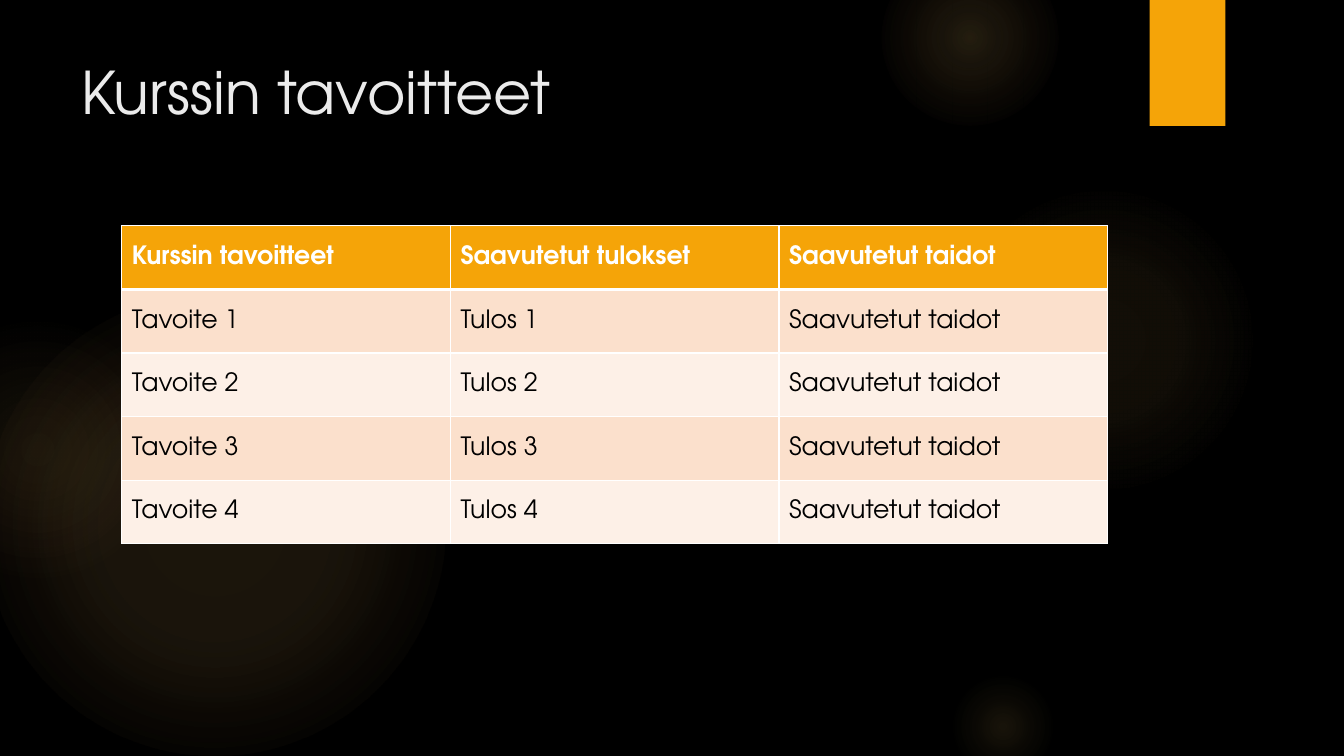
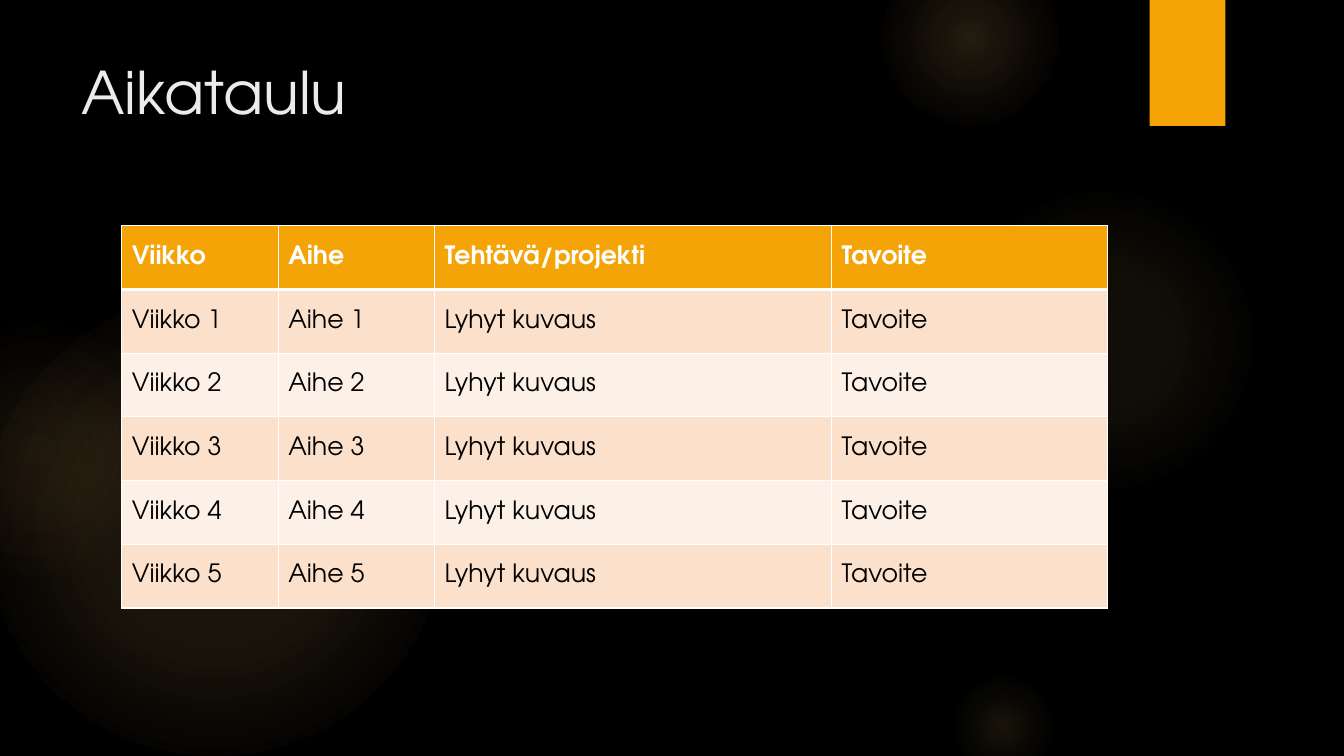
from dataclasses import dataclass

from lxml.etree import SubElement
from pptx import Presentation
from pptx.dml.color import RGBColor
from pptx.enum.shapes import MSO_SHAPE
from pptx.enum.text import MSO_ANCHOR
from pptx.oxml.ns import qn
from pptx.util import Pt

EMU_PER_PX = 9525


@dataclass(frozen=True)
class Theme:
    font: str = "TeX Gyre Adventor"
    background: str = "000000"
    accent: str = "F5A408"
    glow: str = "FAC96A"
    warm_glow: str = "F59B74"
    title: str = "EBEBEB"
    header_text: str = "FFFFFF"
    body_text: str = "000000"
    border: str = "FFFFFF"
    bands: tuple = ("FBE0CC", "FDF0E7")
    title_size: int = 42
    table_size: int = 18
    thin: int = 1
    thick: int = 3


THEME = Theme()
TITLE_BOX = (68, 48, 988, 147)
TAB_BOX = (1095, 0, 72, 120)
TABLE_LEFT, TABLE_TOP = 116, 215

# Left, top, diameter, then (position %, colour, opacity %) from centre to rim
GLOWS = [
    (-16, 280, 440, [(0, THEME.glow, 11), (36, THEME.glow, 10), (75, THEME.glow, 0)]),
    (-88, 304, 248, [(0, THEME.glow, 8), (36, THEME.glow, 5), (71, THEME.warm_glow, 0)]),
    (903, 176, 296, [(0, THEME.glow, 7), (36, THEME.glow, 6), (69, THEME.glow, 0)]),
    (840, -48, 168, [(0, THEME.glow, 14), (36, THEME.glow, 7), (73, THEME.glow, 0)]),
    (903, 640, 104, [(0, THEME.glow, 10), (31, THEME.glow, 5), (66, THEME.glow, 0)]),
]


def px(length):
    return int(length * EMU_PER_PX)


def rgb(colour):
    return RGBColor.from_string(colour)


def add_xml(parent, tag, **attributes):
    return SubElement(parent, qn(tag), {key: str(value) for key, value in attributes.items()})


def add_colour(parent, colour, opacity):
    element = add_xml(parent, "a:srgbClr", val=colour)
    add_xml(element, "a:alpha", val=opacity * 1000)


# Shared backdrop

def add_plain_shape(slide, kind, box):
    shape = slide.shapes.add_shape(kind, *map(px, box))
    shape.shadow.inherit = False
    shape.line.fill.background()
    return shape


def add_glow(slide, left, top, diameter, stops):
    shape = add_plain_shape(slide, MSO_SHAPE.OVAL, (left, top, diameter, diameter))
    shape.fill.gradient()
    gradient = shape.element.spPr.find(qn("a:gradFill"))
    for child in list(gradient):
        gradient.remove(child)
    stop_list = add_xml(gradient, "a:gsLst")
    for position, colour, opacity in stops:
        add_colour(add_xml(stop_list, "a:gs", pos=position * 1000), colour, opacity)
    circle = add_xml(gradient, "a:path", path="circle")
    add_xml(circle, "a:fillToRect", l=50000, t=50000, r=50000, b=50000)
    return shape


def add_accent_tab(slide):
    shape = add_plain_shape(slide, MSO_SHAPE.RECTANGLE, TAB_BOX)
    shape.fill.solid()
    shape.fill.fore_color.rgb = rgb(THEME.accent)
    effects = shape.element.spPr.find(qn("a:effectLst"))
    shadow = add_xml(effects, "a:outerShdw", blurRad=Pt(3), dist=Pt(2),
                     dir=5400000, rotWithShape=0)
    add_colour(shadow, "000000", 45)
    return shape


def add_backdrop(slide):
    """Draw the decoration and move it behind the placeholders of the layout."""
    shapes = [add_glow(slide, *glow) for glow in GLOWS] + [add_accent_tab(slide)]
    layout_tree = slide.slide_layout.shapes.element
    for index, shape in enumerate(shapes, start=2):
        layout_tree.insert(index, shape.element)


# Shared title style

def style_master(master):
    fill = master.background.fill
    fill.solid()
    fill.fore_color.rgb = rgb(THEME.background)
    level = master.element.find(".//" + qn("p:titleStyle") + "/" + qn("a:lvl1pPr"))
    level.set("algn", "l")
    run_style = level.find(qn("a:defRPr"))
    run_style.set("sz", str(THEME.title_size * 100))
    run_style.find(qn("a:latin")).set("typeface", THEME.font)
    colour = run_style.find(qn("a:solidFill"))
    colour.remove(colour[0])
    add_xml(colour, "a:srgbClr", val=THEME.title)


def style_layout(layout):
    for placeholder in list(layout.placeholders):
        if placeholder.placeholder_format.idx:
            placeholder.element.getparent().remove(placeholder.element)
        else:
            placeholder.left, placeholder.top, placeholder.width, placeholder.height = map(px, TITLE_BOX)
            placeholder.text_frame.vertical_anchor = MSO_ANCHOR.TOP


# Slides and tables

def add_titled_slide(presentation, layout, title):
    slide = presentation.slides.add_slide(layout)
    slide.shapes.title.text_frame.paragraphs[0].add_run().text = title
    return slide


def set_borders(cell, top, bottom):
    properties = cell._tc.get_or_add_tcPr()
    widths = {"a:lnL": THEME.thin, "a:lnR": THEME.thin, "a:lnT": top, "a:lnB": bottom}
    for tag, width in widths.items():
        line = add_xml(properties, tag, w=Pt(width))
        add_xml(add_xml(line, "a:solidFill"), "a:srgbClr", val=THEME.border)


def fill_cell(cell, text, row):
    is_header = row == 0
    set_borders(cell, top=THEME.thick if row == 1 else THEME.thin,
                bottom=THEME.thick if is_header else THEME.thin)
    cell.fill.solid()
    cell.fill.fore_color.rgb = rgb(THEME.accent if is_header else THEME.bands[(row - 1) % 2])
    cell.vertical_anchor = MSO_ANCHOR.MIDDLE
    run = cell.text_frame.paragraphs[0].add_run()
    run.text = text
    run.font.name = THEME.font
    run.font.size = Pt(THEME.table_size)
    run.font.bold = is_header
    run.font.color.rgb = rgb(THEME.header_text if is_header else THEME.body_text)


def add_banded_table(slide, rows, column_widths, height):
    frame = slide.shapes.add_table(len(rows), len(column_widths), px(TABLE_LEFT), px(TABLE_TOP),
                                   px(sum(column_widths)), px(height))
    table = frame.table
    for column, width in zip(table.columns, column_widths):
        column.width = px(width)
    for row, texts in enumerate(rows):
        for column, text in enumerate(texts):
            fill_cell(table.cell(row, column), text, row)


def main():
    presentation = Presentation()
    presentation.slide_width, presentation.slide_height = px(1280), px(720)
    layout = presentation.slide_layouts.get_by_name("Title Only")
    style_master(presentation.slide_master)
    style_layout(layout)

    # Course goals
    goals = add_titled_slide(presentation, layout, "Kurssin tavoitteet")
    add_backdrop(goals)
    goal_rows = [("Kurssin tavoitteet", "Saavutetut tulokset", "Saavutetut taidot")]
    goal_rows += [(f"Tavoite {n}", f"Tulos {n}", "Saavutetut taidot") for n in range(1, 5)]
    add_banded_table(goals, goal_rows, [313] * 3, height=303)

    # Schedule
    schedule = add_titled_slide(presentation, layout, "Aikataulu")
    week_rows = [("Viikko", "Aihe", "Tehtävä/projekti", "Tavoite")]
    week_rows += [(f"Viikko {n}", f"Aihe {n}", "Lyhyt kuvaus", "Tavoite") for n in range(1, 6)]
    add_banded_table(schedule, week_rows, [149, 149, 378, 263], height=364)

    presentation.save("out.pptx")


if __name__ == "__main__":
    main()
